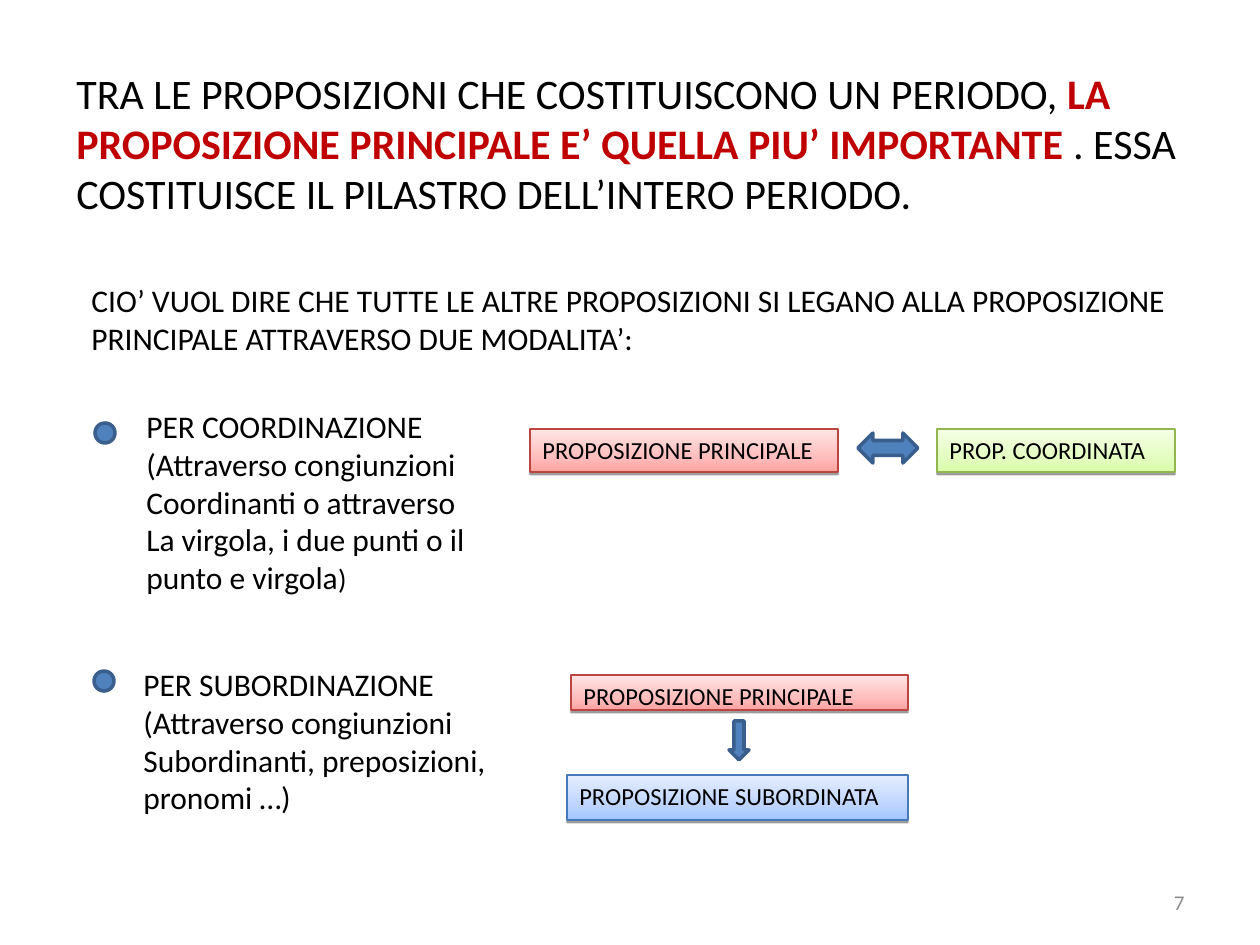
from copy import deepcopy

from lxml import etree
from pptx import Presentation, util as u
from pptx.dml.color import RGBColor
from pptx.enum import shapes, text
from pptx.oxml.ns import qn

PX = 914400 / 126
KINDS = shapes.MSO_SHAPE
ANCHOR = text.MSO_ANCHOR
BLACK, RED, GREY = "000000", "C00000", "8C8C8C"


def color(value):
    return RGBColor.from_string(value)


def write(frame, paragraphs, **formats):
    """Fill a text frame; each paragraph is a list of (text, size, colour, bold)."""
    for name, value in formats.items():
        setattr(frame, name, value)
    for index, runs in enumerate(paragraphs):
        line = frame.paragraphs[0] if index == 0 else frame.add_paragraph()
        line.alignment = text.PP_ALIGN.LEFT
        for words, size, shade, bold in runs:
            run = line.add_run()
            run.text = words
            run.font.color.rgb = color(shade)
            for name, value in {"name": "Calibri", "size": u.Pt(size), "bold": bold}.items():
                setattr(run.font, name, value)


deck = Presentation()
deck.slide_width, deck.slide_height = u.Inches(10), u.Inches(7.5)
slide = deck.slides.add_slide(deck.slide_layouts[6])

# Text blocks: place, top margin, wrapping, paragraphs
heading = [[
    ("TRA LE PROPOSIZIONI CHE COSTITUISCONO UN PERIODO, ", 24, BLACK, False),
    ("LA PROPOSIZIONE PRINCIPALE E’ QUELLA PIU’ IMPORTANTE ", 24, RED, True),
    (". ESSA COSTITUISCE IL PILASTRO DELL’INTERO PERIODO.", 24, BLACK, False),
]]
intro = [[("CIO’ VUOL DIRE CHE TUTTE LE ALTRE PROPOSIZIONI SI LEGANO ALLA "
           "PROPOSIZIONE PRINCIPALE ATTRAVERSO DUE MODALITA’:", 18, BLACK, False)]]
coordination = [[(words, 18, BLACK, False)] for words in (
    "PER COORDINAZIONE",
    "(Attraverso congiunzioni",
    "Coordinanti o attraverso",
    "La virgola, i due punti o il",
    "punto e virgola",
)]
coordination[-1].append((")", 16, BLACK, False))
subordination = [[(words, 18, BLACK, False)] for words in (
    "PER SUBORDINAZIONE",
    "(Attraverso congiunzioni",
    "Subordinanti, preposizioni,",
    "pronomi …)",
)]
page_number = [[("7", 12, GREY, False)]]

for place, margin, wrap, paragraphs in (
    ((64, 38, 1191, 296), 29, True, heading),
    ((79, 234, 1225, 127), 47, True, intro),
    ((134, 398, 355, 204), 9, False, coordination),
    ((131, 626, 379, 233), 39, False, subordination),
    ((903, 876, 294, 50), 14, True, page_number),
):
    block = slide.shapes.add_textbox(*(round(n * PX) for n in place))
    write(block.text_frame, paragraphs, word_wrap=wrap,
          margin_top=round(margin * PX), vertical_anchor=ANCHOR.TOP)
block.text_frame.paragraphs[0].alignment = text.PP_ALIGN.RIGHT

# Clause labels: gradient from bottom to top, thin line, hard shadow below
red = ("FFA2A1", "FFBEBD", "FFE5E5"), "BC4542"
green = ("DAFDA7", "E4FDC2", "F5FFE6"), "94B64E"
blue = ("A3C4FF", "BFD5FF", "E5EEFF"), "4579B8"

for place, words, (shades, edge) in (
    ((530, 429, 308, 43), "PROPOSIZIONE PRINCIPALE", red),
    ((937, 429, 238, 43), "PROP. COORDINATA", green),
    ((571, 675, 337, 35), "PROPOSIZIONE PRINCIPALE", red),
    ((567, 775, 341, 45), "PROPOSIZIONE SUBORDINATA", blue),
):
    clause = slide.shapes.add_shape(KINDS.RECTANGLE, *(round(n * PX) for n in place))
    clause.fill.gradient()
    clause.fill.gradient_angle = 90
    stop_list = clause._element.spPr.find(".//" + qn("a:gsLst"))
    stop_list.append(deepcopy(stop_list[0]))
    for stop, position, shade in zip(clause.fill.gradient_stops, (0, 0.35, 1), shades):
        stop.position = position
        stop.color.rgb = color(shade)
    clause.line.color.rgb = color(edge)
    clause.line.width = u.Pt(0.75)

    clause.shadow.inherit = False
    effects = clause._element.spPr.find(qn("a:effectLst"))
    shadow = etree.SubElement(effects, qn("a:outerShdw"), blurRad="0",
                              dist=str(u.Pt(1.6)), dir="5400000", rotWithShape="0")
    tone = etree.SubElement(shadow, qn("a:srgbClr"), val=BLACK)
    etree.SubElement(tone, qn("a:alpha"), val="38000")
    write(clause.text_frame, [[(words, 14, BLACK, False)]],
          word_wrap=True, vertical_anchor=ANCHOR.TOP)

# Arrows between the clauses and the dots before the two modes
for kind, place in (
    (KINDS.DOWN_ARROW, (729, 721, 20, 39)),
    (KINDS.LEFT_RIGHT_ARROW, (858, 433, 60, 30)),
    (KINDS.FLOWCHART_CONNECTOR, (94, 671, 20, 20)),
    (KINDS.FLOWCHART_CONNECTOR, (95, 423, 20, 20)),
):
    sign = slide.shapes.add_shape(kind, *(round(n * PX) for n in place))
    sign.shadow.inherit = False
    sign.fill.solid()
    sign.fill.fore_color.rgb = color("4F81BD")
    sign.line.color.rgb = color("3A5F8C")
    sign.line.width = u.Pt(2)

deck.save("out.pptx")
